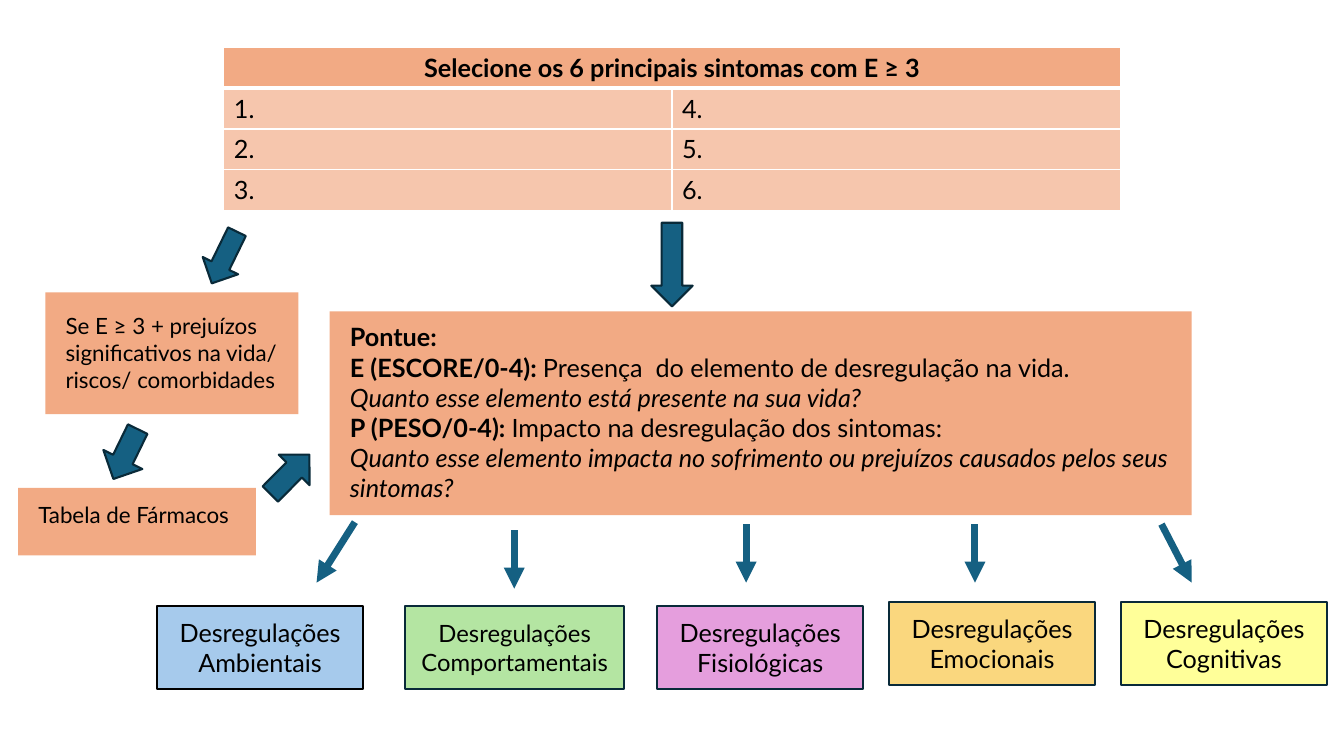
import pptx
import pptx.util
import pptx.dml.color
import pptx.enum.shapes
import pptx.enum.text
import pptx.oxml
import pptx.oxml.ns
from pptx.util import Inches

SHAPES = pptx.enum.shapes.MSO_SHAPE
ALIGN = pptx.enum.text.PP_ALIGN
ANCHOR = pptx.enum.text.MSO_ANCHOR
AUTO_SIZE = pptx.enum.text.MSO_AUTO_SIZE


def color(hex_text):
    return pptx.dml.color.RGBColor.from_string(hex_text)


def add_text(paragraph, text, size=18, bold=False, italic=False):
    run = paragraph.add_run()
    run.text = text
    run.font.name = SlideBuilder.font
    run.font.size = pptx.util.Pt(size)
    run.font.bold = bold
    run.font.italic = italic
    run.font.color.rgb = color(SlideBuilder.ink)


class SlideBuilder:
    font = "Lato"
    ink = "000000"
    salmon = "F2AA84"
    pale_salmon = "F6C6AD"
    teal = "156082"
    outline = "092A39"
    white = "FFFFFF"

    def __init__(self, slide):
        self.slide = slide

    def shape(self, kind, place, fill, line=None):
        shape = self.slide.shapes.add_shape(kind, *map(Inches, place))
        shape.shadow.inherit = False
        shape.fill.solid()
        shape.fill.fore_color.rgb = color(fill)
        if line:
            shape.line.color.rgb = color(line)
            shape.line.width = pptx.util.Pt(1.5)
        else:
            shape.line.fill.background()
        return shape

    def block_arrow(self, place, rotation=0):
        arrow = self.shape(SHAPES.DOWN_ARROW, place, self.teal, self.outline)
        arrow.rotation = rotation

    def note(self, place, paragraphs, size, vertical_inset):
        frame = self.shape(SHAPES.RECTANGLE, place, self.salmon).text_frame
        frame.word_wrap = True
        frame.auto_size = AUTO_SIZE.SHAPE_TO_FIT_TEXT
        frame.vertical_anchor = ANCHOR.TOP
        frame.margin_left = frame.margin_right = Inches(0.2)
        frame.margin_top = frame.margin_bottom = Inches(vertical_inset)
        for index, runs in enumerate(paragraphs):
            paragraph = frame.add_paragraph() if index else frame.paragraphs[0]
            paragraph.alignment = ALIGN.LEFT
            for text, style in runs:
                add_text(paragraph, text, size=size, **style)

    def category(self, left, top, width, name, fill, line, size):
        box = self.shape(SHAPES.RECTANGLE, (left, top, width, 0.83), fill, line)
        frame = box.text_frame
        frame.word_wrap = True
        frame.vertical_anchor = ANCHOR.MIDDLE
        frame.paragraphs[0].alignment = ALIGN.CENTER
        add_text(frame.paragraphs[0], f"Desregulações {name}", size=size)

    def line_arrow(self, start, end):
        arrow = self.slide.shapes.add_connector(
            pptx.enum.shapes.MSO_CONNECTOR.STRAIGHT, *map(Inches, start + end))
        arrow.line.color.rgb = color(self.teal)
        arrow.line.width = pptx.util.Pt(5)
        head = pptx.oxml.parse_xml(
            f'<a:tailEnd {pptx.oxml.ns.nsdecls("a")} type="triangle"/>')
        arrow.line._get_or_add_ln().append(head)
        arrow._element.spPr.append(pptx.oxml.parse_xml(
            f'<a:effectLst {pptx.oxml.ns.nsdecls("a")}/>'))

    def cell_style(self, cell, fill, borders):
        cell.fill.solid()
        cell.fill.fore_color.rgb = color(fill)
        properties = cell._tc.get_or_add_tcPr()
        for index, (side, points) in enumerate(borders.items()):
            properties.insert(index, pptx.oxml.parse_xml(
                f'<a:ln{side} {pptx.oxml.ns.nsdecls("a")} w="{points * 12700}">'
                f'<a:solidFill><a:srgbClr val="{self.white}"/></a:solidFill>'
                f'</a:ln{side}>'))

    def symptom_table(self, place, heading, rows):
        table = self.slide.shapes.add_table(
            len(rows) + 1, 2, *map(Inches, place)).table
        for row_index, texts in enumerate([(heading, ""), *rows]):
            is_heading = row_index == 0
            borders = {"L": 1, "R": 1, "T": 3 if row_index == 1 else 1,
                       "B": 3 if is_heading else 1}
            for column, text in enumerate(texts):
                cell = table.cell(row_index, column)
                fill = self.salmon if is_heading else self.pale_salmon
                self.cell_style(cell, fill, borders)
                if text:
                    add_text(cell.text_frame.paragraphs[0], text, bold=is_heading)
        table.cell(0, 0).merge(table.cell(0, 1))
        table.cell(0, 0).text_frame.paragraphs[0].alignment = ALIGN.CENTER


def main():
    deck = pptx.Presentation()
    deck.slide_width = Inches(13.33)
    deck.slide_height = Inches(7.5)
    builder = SlideBuilder(deck.slides.add_slide(deck.slide_layouts[6]))

    builder.symptom_table(
        (2.22, 0.47, 8.89, 1.62),
        "Selecione os 6 principais sintomas com E ≥ 3",
        [(f"{number}.", f"{number + 3}.") for number in range(1, 4)])

    plain, bold, italic = {}, {"bold": True}, {"italic": True}
    builder.note(
        (0.45, 2.9, 2.51, 1.21),
        [[("Se E ≥ 3 + prejuízos significativos na vida/ riscos/ comorbidades",
           plain)]], 16, 0.2)
    builder.note((0.18, 4.84, 2.36, 0.67),
                 [[("Tabela de Fármacos", plain)]], 16, 0.2)
    builder.note((3.27, 3.09, 8.55, 2.02), [
        [("Pontue:", bold)],
        [("E (ESCORE/0-4): ", bold),
         ("Presença  do elemento de desregulação na vida.", plain)],
        [("Quanto esse elemento está presente na sua vida?", italic)],
        [("P (PESO/0-4): ", bold),
         ("Impacto na desregulação dos sintomas:", plain)],
        [("Quanto esse elemento impacta no sofrimento ou prejuízos causados "
          "pelos seus sintomas?", italic)],
    ], 18, 0.1)

    for place, rotation in [
        ((2.03, 2.27, 0.39, 0.57), 26),
        ((1.03, 4.23, 0.43, 0.55), 26),
        ((2.66, 4.43, 0.43, 0.55), 224.7),
        ((6.46, 2.21, 0.41, 0.83), 0),
    ]:
        builder.block_arrow(place, rotation)

    outline = builder.outline
    for category in [
        (1.56, 6.01, 2.04, "Ambientais", "A6CAEC", builder.ink, 18),
        (4.02, 6.01, 2.17, "Comportamentais", "B4E5A2", outline, 17),
        (6.52, 6.01, 2.04, "Fisiológicas", "E59EDD", outline, 18),
        (8.82, 5.97, 2.04, "Emocionais", "FAD77E", outline, 18),
        (11.12, 5.97, 2.04, "Cognitivas", "FFFF99", outline, 18),
    ]:
        builder.category(*category)

    for start, end in [
        ((3.52, 5.18), (3.14, 5.78)),
        ((5.1, 5.26), (5.1, 5.84)),
        ((7.4, 5.2), (7.4, 5.78)),
        ((9.67, 5.2), (9.67, 5.78)),
        ((11.52, 5.2), (11.82, 5.78)),
    ]:
        builder.line_arrow(start, end)

    deck.save("out.pptx")


if __name__ == "__main__":
    main()
